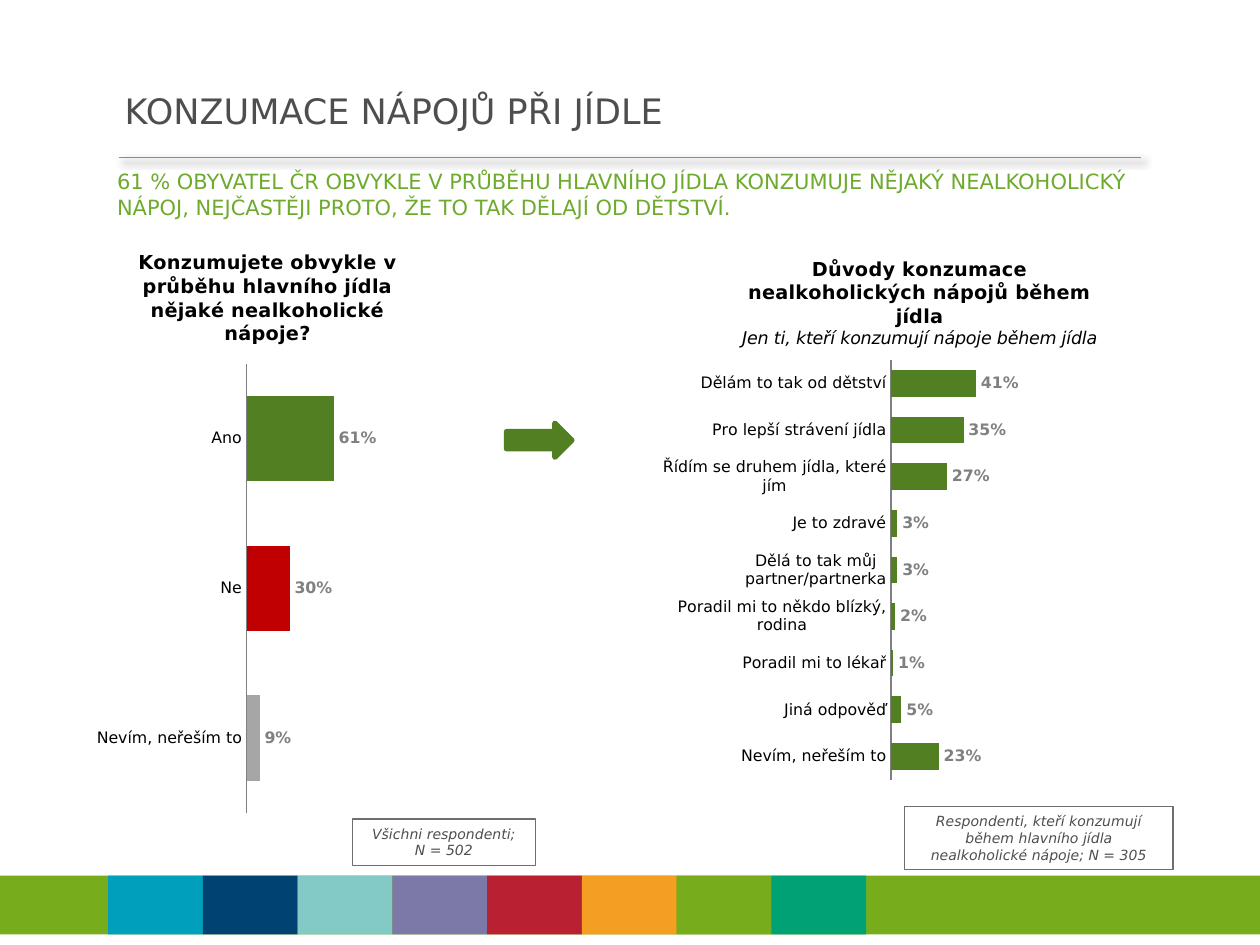
from lxml.etree import SubElement
from pptx import Presentation
from pptx.chart.data import CategoryChartData
from pptx.dml.color import RGBColor
from pptx.enum.chart import XL_CHART_TYPE, XL_LABEL_POSITION, XL_TICK_MARK
from pptx.enum.shapes import MSO_CONNECTOR, MSO_SHAPE
from pptx.enum.text import MSO_ANCHOR, MSO_AUTO_SIZE, PP_ALIGN
from pptx.oxml import parse_xml
from pptx.oxml.ns import nsdecls, qn
from pptx.util import Cm, Pt

FONT = "DejaVu Sans"
GREEN, BAND_GREEN, DARK = "527F22", "77AD1C", "4E4E4E"

TITLE = "KONZUMACE NÁPOJŮ PŘI JÍDLE"
SUBTITLE = ("61 % OBYVATEL ČR OBVYKLE V PRŮBĚHU HLAVNÍHO JÍDLA KONZUMUJE NĚJAKÝ "
            "NEALKOHOLICKÝ NÁPOJ, NEJČASTĚJI PROTO, ŽE TO TAK DĚLAJÍ OD DĚTSTVÍ.")
HEADING = {"size": 11, "bold": True}
SUBHEADING = {"size": 10, "bold": False, "italic": True}

# Boxes are left, top, width, height in cm; layouts are fractions of the chart.
CHARTS = [
    {
        "box": (1.68, 4.72, 6.91, 11.68),
        "title": [("Konzumujete obvykle v průběhu hlavního jídla nějaké nealkoholické nápoje?",
                   HEADING)],
        "title_at": {"x": 0.15, "y": 0.02},
        "plot": {"x": 0.477, "y": 0.224, "w": 0.416, "h": 0.776},
        "answers": [("Ano", 0.61), ("Ne", 0.3), ("Nevím, neřeším to", 0.09)],
        "point_colors": {1: "C00000", 2: "A6A6A6"},
    },
    {
        "box": (13.18, 4.95, 10.03, 11.66),
        "title": [("Důvody konzumace nealkoholických nápojů během jídla", HEADING),
                  ("Jen ti, kteří konzumují nápoje během jídla", SUBHEADING)],
        "title_at": {"x": 0.17, "y": 0.01},
        "plot": {"x": 0.477, "y": 0.198, "w": 0.416, "h": 0.726},
        "answers": [
            ("Dělám to tak od dětství", 0.41),
            ("Pro lepší strávení jídla", 0.35),
            ("Řídím se druhem jídla, které jím", 0.27),
            ("Je to zdravé", 0.03),
            ("Dělá to tak můj partner/partnerka", 0.03),
            ("Poradil mi to někdo blízký, rodina", 0.02),
            ("Poradil mi to lékař", 0.01),
            ("Jiná odpověď", 0.05),
            ("Nevím, neřeším to", 0.23),
        ],
        "point_colors": {},
    },
]
SAMPLES = [
    ("Respondenti, kteří konzumují během hlavního jídla nealkoholické nápoje; N = 305",
     (18.24, 16.26, 5.41, 1.27)),
    ("Všichni respondenti; N = 502", (7.11, 16.51, 3.68, 0.94)),
]
TILES = ["009FBB", "004272", "83C9C6", "7C78A8", "B92032", "F49F22", BAND_GREEN, "00A275"]
TILE_LEFT, TILE_WIDTH = 2.18, 1.91
BAND_TOP, BAND_HEIGHT = 17.65, 1.19


def rgb(color):
    return RGBColor.from_string(color)


def cm(box):
    return [Cm(length) for length in box]


def set_font(font, size, color="000000", **style):
    font.name, font.size, font.color.rgb = FONT, Pt(size), rgb(color)
    for name, value in style.items():
        setattr(font, name, value)


def add_block(slide, box, fill=None, line=None, width=0.75, kind=MSO_SHAPE.RECTANGLE):
    block = slide.shapes.add_shape(kind, *cm(box))
    block.shadow.inherit = False
    if fill:
        block.fill.solid()
        block.fill.fore_color.rgb = rgb(fill)
    else:
        block.fill.background()
    if line:
        block.line.color.rgb = rgb(line)
        block.line.width = Pt(width)
    else:
        block.line.fill.background()
    return block


def add_rule(slide):
    left, top, right = Cm(2.39), Cm(3.18), Cm(23.01)
    rule = slide.shapes.add_connector(MSO_CONNECTOR.STRAIGHT, left, top, right, top)
    rule.line.color.rgb = rgb(BAND_GREEN)
    rule.line.width = Pt(0.75)
    rule._element.spPr.append(parse_xml(
        f'<a:effectLst {nsdecls("a")}><a:outerShdw blurRad="{Pt(4)}" dist="{Pt(3)}" '
        'dir="2700000" rotWithShape="0"><a:srgbClr val="000000"><a:alpha val="40000"/>'
        '</a:srgbClr></a:outerShdw></a:effectLst>'))


def set_layout(parent, place, inner=False):
    """Place a chart title or plot area by fractions of the chart."""
    layout = parent.find(qn("c:layout"))
    if layout is None:
        layout = parent.makeelement(qn("c:layout"))
        text = parent.find(qn("c:tx"))
        parent.insert(0 if text is None else 1, layout)
    for child in list(layout):
        layout.remove(child)
    manual = SubElement(layout, qn("c:manualLayout"))
    if inner:
        SubElement(manual, qn("c:layoutTarget")).set("val", "inner")
    for mode in ("xMode", "yMode"):
        SubElement(manual, qn(f"c:{mode}")).set("val", "edge")
    for name, value in place.items():
        SubElement(manual, qn(f"c:{name}")).set("val", str(value))


def add_answer_chart(slide, content):
    answers, values = zip(*content["answers"])
    data = CategoryChartData(number_format="0%")
    data.categories = answers
    data.add_series("Series 1", values)
    chart = slide.shapes.add_chart(XL_CHART_TYPE.BAR_CLUSTERED, *cm(content["box"]), data).chart
    set_font(chart.font, 18)
    chart.has_legend = False

    frame = chart.chart_title.text_frame
    for index, (text, style) in enumerate(content["title"]):
        paragraph = frame.add_paragraph() if index else frame.paragraphs[0]
        run = paragraph.add_run()
        run.text = text
        set_font(run.font, **style)
    chart.chart_title.include_in_layout = False
    set_layout(chart.chart_title._element, content["title_at"])
    set_layout(chart._chartSpace.chart.plotArea, content["plot"], inner=True)

    category_axis, value_axis = chart.category_axis, chart.value_axis
    category_axis.reverse_order = True
    category_axis.major_tick_mark = XL_TICK_MARK.NONE
    category_axis.format.line.color.rgb = rgb("808080")
    category_axis.format.line.width = Pt(0.75)
    set_font(category_axis.tick_labels.font, 9)
    value_axis.minimum_scale, value_axis.maximum_scale = 0, 1
    value_axis.has_major_gridlines = False
    value_axis.visible = False

    plot = chart.plots[0]
    plot.gap_width = 75
    plot.vary_by_categories = False
    series = plot.series[0]
    bars = [(series, GREEN)]
    bars += [(series.points[i], color) for i, color in content["point_colors"].items()]
    for bar, color in bars:
        bar.format.fill.solid()
        bar.format.fill.fore_color.rgb = rgb(color)
    labels = series.data_labels
    label_format = {"show_value": True, "number_format": "0%",
                    "number_format_is_linked": False, "position": XL_LABEL_POSITION.OUTSIDE_END}
    for name, value in label_format.items():
        setattr(labels, name, value)
    set_font(labels.font, 9, "808080", bold=True)


def main():
    deck = Presentation()
    deck.slide_width, deck.slide_height = Cm(25.4), Cm(19.05)
    slide = deck.slides.add_slide(deck.slide_layouts[5])

    add_rule(slide)
    add_block(slide, (0, BAND_TOP, 25.4, BAND_HEIGHT), BAND_GREEN)
    for index, color in enumerate(TILES):
        add_block(slide, (TILE_LEFT + index * TILE_WIDTH, BAND_TOP, TILE_WIDTH, BAND_HEIGHT), color)

    title = slide.shapes.title
    title.left, title.top, title.width, title.height = cm((2.26, 1.57, 22.53, 1.3))
    subtitle = slide.shapes.add_textbox(*cm((2.11, 3.28, 22.4, 1.4)))
    headings = [(title, TITLE, 20, DARK, MSO_ANCHOR.MIDDLE),
                (subtitle, SUBTITLE, 12, "6EAA2E", MSO_ANCHOR.TOP)]
    for heading, text, size, color, anchor in headings:
        frame = heading.text_frame
        frame.text = text
        frame.word_wrap, frame.auto_size = True, MSO_AUTO_SIZE.NONE
        frame.vertical_anchor = anchor
        frame.paragraphs[0].alignment = PP_ALIGN.LEFT
        set_font(frame.paragraphs[0].runs[0].font, size, color)

    for content in CHARTS:
        add_answer_chart(slide, content)

    for text, box in SAMPLES:
        frame = add_block(slide, box, line="6E6E6E").text_frame
        frame.text = text
        frame.word_wrap = True
        frame.vertical_anchor = MSO_ANCHOR.TOP
        frame.paragraphs[0].alignment = PP_ALIGN.CENTER
        set_font(frame.paragraphs[0].runs[0].font, 8, DARK, italic=True)

    add_block(slide, (10.21, 8.53, 1.32, 0.69), GREEN, GREEN, 3, MSO_SHAPE.RIGHT_ARROW)
    deck.save("out.pptx")


if __name__ == "__main__":
    main()
